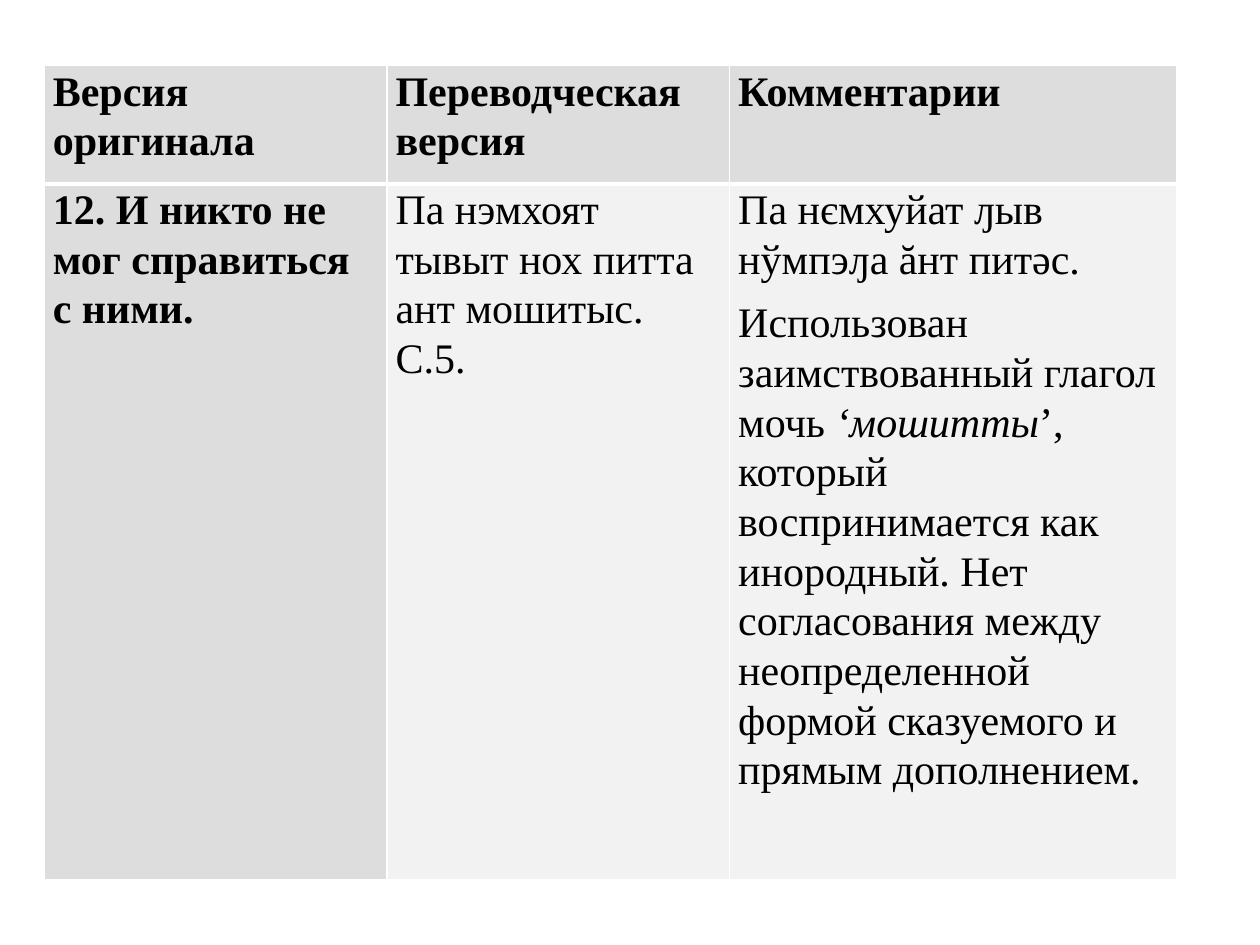
from lxml import etree
from pptx import Presentation
from pptx.dml.color import RGBColor
from pptx.oxml import parse_xml
from pptx.oxml.ns import nsdecls
from pptx.util import Inches, Pt

COLORS = {"text": "000000", "line": "FFFFFF", "head": "DDDDDD", "body": "F2F2F2"}
FONT = "Times New Roman"
COLS = (2.72, 2.72, 3.55)
ROWS = (0.94, 5.52)

# Each cell is a list of paragraphs; each paragraph is a list of (words, italic).
CELLS = [
    [
        [[("Версия оригинала", False)]],
        [[("Переводческая версия", False)]],
        [[("Комментарии", False)]],
    ],
    [
        [[("12. И никто не мог справиться с ними.", False)]],
        [[("Па нэмхоят тывыт нох питта ант мошитыс. С.5.", False)]],
        [
            [("Па нємхуйат ԓыв нўмпэԓа ăнт питәс.", False)],
            [
                ("Использован заимствованный глагол мочь ", False),
                ("‘мошитты", True),
                ("’, который воспринимается как инородный. Нет согласования "
                 "между неопределенной формой сказуемого и прямым дополнением.", False),
            ],
        ],
    ],
]


def rgb(name):
    return RGBColor.from_string(COLORS[name])


def edge(cell, side, width):
    """Draw one border; must run before the cell's fill is set."""
    cell._tc.get_or_add_tcPr().append(parse_xml(
        f'<a:ln{side} {nsdecls("a")} w="{Pt(width)}"><a:solidFill>'
        f'<a:srgbClr val="{COLORS["line"]}"/></a:solidFill></a:ln{side}>'))


def write(cell, paras, bold):
    frame = cell.text_frame
    for i, runs in enumerate(paras):
        para = frame.paragraphs[0] if i == 0 else frame.add_paragraph()
        para.line_spacing = 1.07
        para.space_after = Pt(8)
        for words, italic in runs:
            run = para.add_run()
            run.text = words
            font = run.font
            font.name, font.size = FONT, Pt(24)
            font.bold, font.italic = bold, italic
            font.color.rgb = rgb("text")


def style(cell, row, head):
    cell.margin_left = cell.margin_right = Inches(0.07)
    cell.margin_top = cell.margin_bottom = 0
    thick = "B" if row == 0 else "T"
    for side in "LRTB":
        edge(cell, side, 3 if side == thick else 1)
    cell.fill.solid()
    cell.fill.fore_color.rgb = rgb("head" if head else "body")


def add_grid(slide):
    frame = slide.shapes.add_table(
        len(ROWS), len(COLS), Inches(0.35), Inches(0.52),
        Inches(sum(COLS)), Inches(sum(ROWS)))
    table = frame.table
    for col, width in zip(table.columns, COLS):
        col.width = Inches(width)
    for row, height in zip(table.rows, ROWS):
        row.height = Inches(height)
    for r, line in enumerate(CELLS):
        for c, paras in enumerate(line):
            cell = table.cell(r, c)
            head = r == 0 or c == 0
            style(cell, r, head)
            write(cell, paras, head)


def main():
    deck = Presentation()
    deck.slide_width, deck.slide_height = Inches(10), Inches(7.5)
    add_grid(deck.slides.add_slide(deck.slide_layouts[6]))
    deck.save("out.pptx")


if __name__ == "__main__":
    main()
